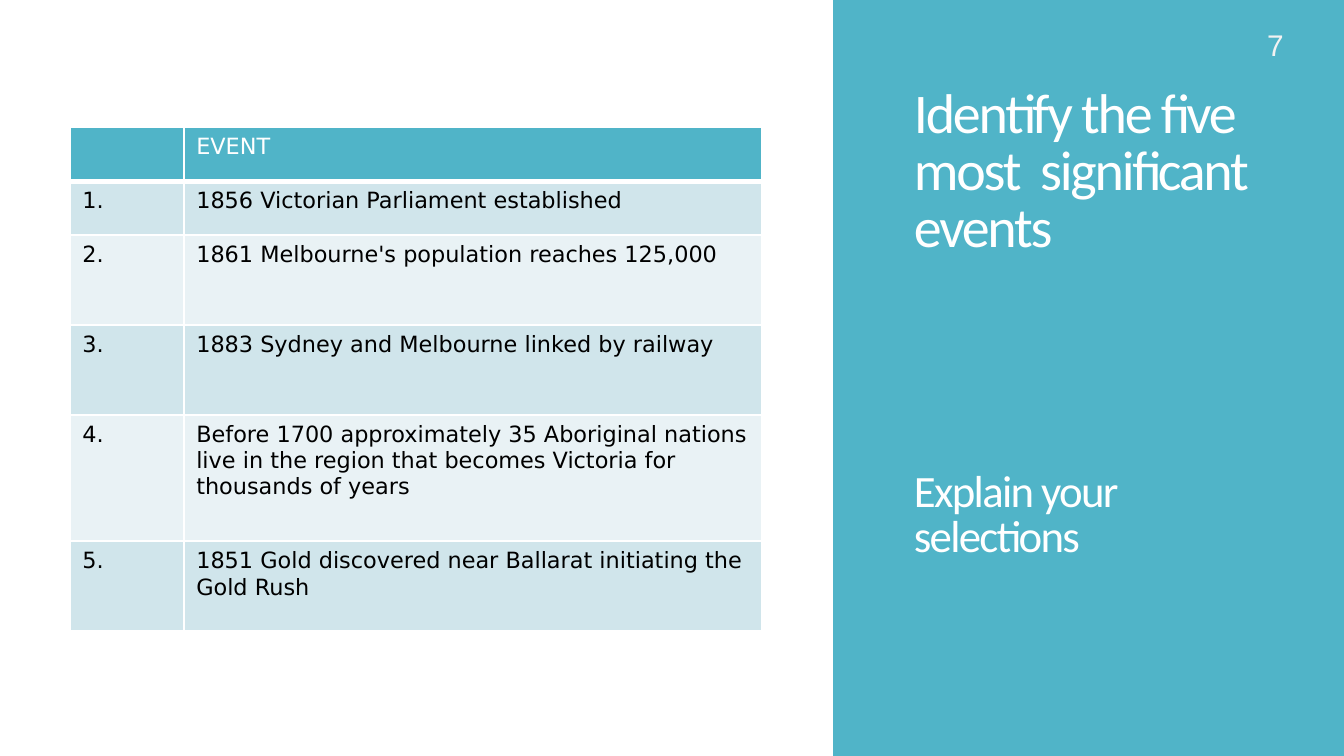
from dataclasses import dataclass

from lxml.etree import SubElement as Sub
from pptx import Presentation
from pptx.dml.color import RGBColor as RGB
from pptx.enum.shapes import MSO_SHAPE as Kind
from pptx.enum.text import MSO_ANCHOR as Anchor, MSO_AUTO_SIZE as Fit
from pptx.oxml.ns import qn
from pptx.util import Pt

TEAL = RGB(0x50, 0xB4, 0xC8)
BANDS = (RGB(0xD0, 0xE5, 0xEB), RGB(0xE9, 0xF2, 0xF5))
WHITE = RGB(0xFF, 0xFF, 0xFF)
BLACK = RGB(0, 0, 0)
PALE = RGB(0xF2, 0xF2, 0xF2)


@dataclass
class Style:
    font: str
    size: float
    color: RGB
    track: float = 0


@dataclass
class Box:
    left: float
    top: float
    width: float
    height: float

    def sides(self) -> tuple:
        return Pt(self.left), Pt(self.top), Pt(self.width), Pt(self.height)


@dataclass
class Event:
    text: str
    height: float


HEAD = Style("DejaVu Sans", 12, WHITE)
CELL = Style("DejaVu Sans", 12, BLACK)
TITLE = Style("Calibri", 30, WHITE, -1.2)
TASK = Style("Calibri", 24, WHITE, -0.9)
PAGE = Style("Arial", 16, PALE)

HEADER = Event("EVENT", 28.8)
EVENTS = [
    Event("1856 Victorian Parliament established", 28.8),
    Event("1861 Melbourne's population reaches 125,000", 48.2),
    Event("1883 Sydney and Melbourne linked by railway", 48.2),
    Event("Before 1700 approximately 35 Aboriginal nations live in the region "
          "that becomes Victoria for thousands of years", 67.7),
    Event("1851 Gold discovered near Ballarat initiating the Gold Rush", 48.2),
]
COLS = (61, 309.4)


def add_run(para, text: str, style: Style) -> None:
    run = para.add_run()
    run.text = text
    run.font.name = style.font
    run.font.size = Pt(style.size)
    run.font.color.rgb = style.color
    if style.track:
        run.font._element.set("spc", str(round(style.track * 100)))


def edge(cell, below: float) -> None:
    props = cell._tc.get_or_add_tcPr()
    for tag, width in (("L", 1), ("R", 1), ("T", 1), ("B", below)):
        line = Sub(props, qn(f"a:ln{tag}"), w=str(Pt(width)))
        fill = Sub(line, qn("a:solidFill"))
        Sub(fill, qn("a:srgbClr"), val=str(WHITE))


def fill_cell(cell, text: str, style: Style, color: RGB, below: float) -> None:
    cell.margin_left = cell.margin_right = Pt(6.5)
    cell.margin_top = cell.margin_bottom = Pt(3.6)
    edge(cell, below)
    cell.fill.solid()
    cell.fill.fore_color.rgb = color
    if text:
        add_run(cell.text_frame.paragraphs[0], text, style)


def set_holder(shape, box: Box, text: str, style: Style, anchor: Anchor):
    shape.left, shape.top, shape.width, shape.height = box.sides()
    frame = shape.text_frame
    frame.auto_size = Fit.NONE
    frame.word_wrap = True
    frame.vertical_anchor = anchor
    para = frame.paragraphs[0]
    para.line_spacing = 0.85
    para.space_before = Pt(0)
    add_run(para, text, style)
    return para


def add_panel(slide, box: Box) -> None:
    panel = slide.shapes.add_shape(Kind.RECTANGLE, *box.sides())
    panel.shadow.inherit = False
    panel.fill.solid()
    panel.fill.fore_color.rgb = TEAL
    panel.line.fill.background()
    # Behind the placeholders
    slide.shapes._spTree.insert(2, panel._element)


def add_events(slide, left: float, top: float) -> None:
    rows = [HEADER, *EVENTS]
    box = Box(left, top, sum(COLS), sum(row.height for row in rows))
    table = slide.shapes.add_table(len(rows), len(COLS), *box.sides()).table
    for col, width in zip(table.columns, COLS):
        col.width = Pt(width)
    for num, row in enumerate(rows):
        table.rows[num].height = Pt(row.height)
        style, color, below = (CELL, BANDS[(num - 1) % 2], 1) if num else (HEAD, TEAL, 3)
        label = f"{num}." if num else ""
        for col, text in enumerate((label, row.text)):
            fill_cell(table.cell(num, col), text, style, color, below)


def main() -> None:
    deck = Presentation()
    deck.slide_width, deck.slide_height = Pt(720), Pt(405)
    slide = deck.slides.add_slide(deck.slide_layouts[1])

    # Side panel
    add_panel(slide, Box(446.4, 0, 273.6, 405))

    # Title and task
    title, body = slide.placeholders
    set_holder(title, Box(482.4, 29.5, 200.9, 113),
               "Identify the five most  significant events", TITLE,
               Anchor.BOTTOM).alignment = 1
    task = set_holder(body, Box(482.4, 142.6, 200.9, 198),
                      "Explain your selections", TASK, Anchor.TOP)
    task.space_after = Pt(6)
    body.text_frame.margin_top = Pt(109.5)
    props = task._p.get_or_add_pPr()
    props.set("marL", "0")
    props.set("indent", "0")
    Sub(props, qn("a:buNone"))

    # Table of events
    add_events(slide, 37.7, 67.9)

    # Page number
    page = slide.shapes.add_textbox(*Box(671.8, 10.8, 33.8, 26.6).sides())
    page.text_frame.word_wrap = True
    add_run(page.text_frame.paragraphs[0], "7", PAGE)

    deck.save("out.pptx")


if __name__ == "__main__":
    main()
